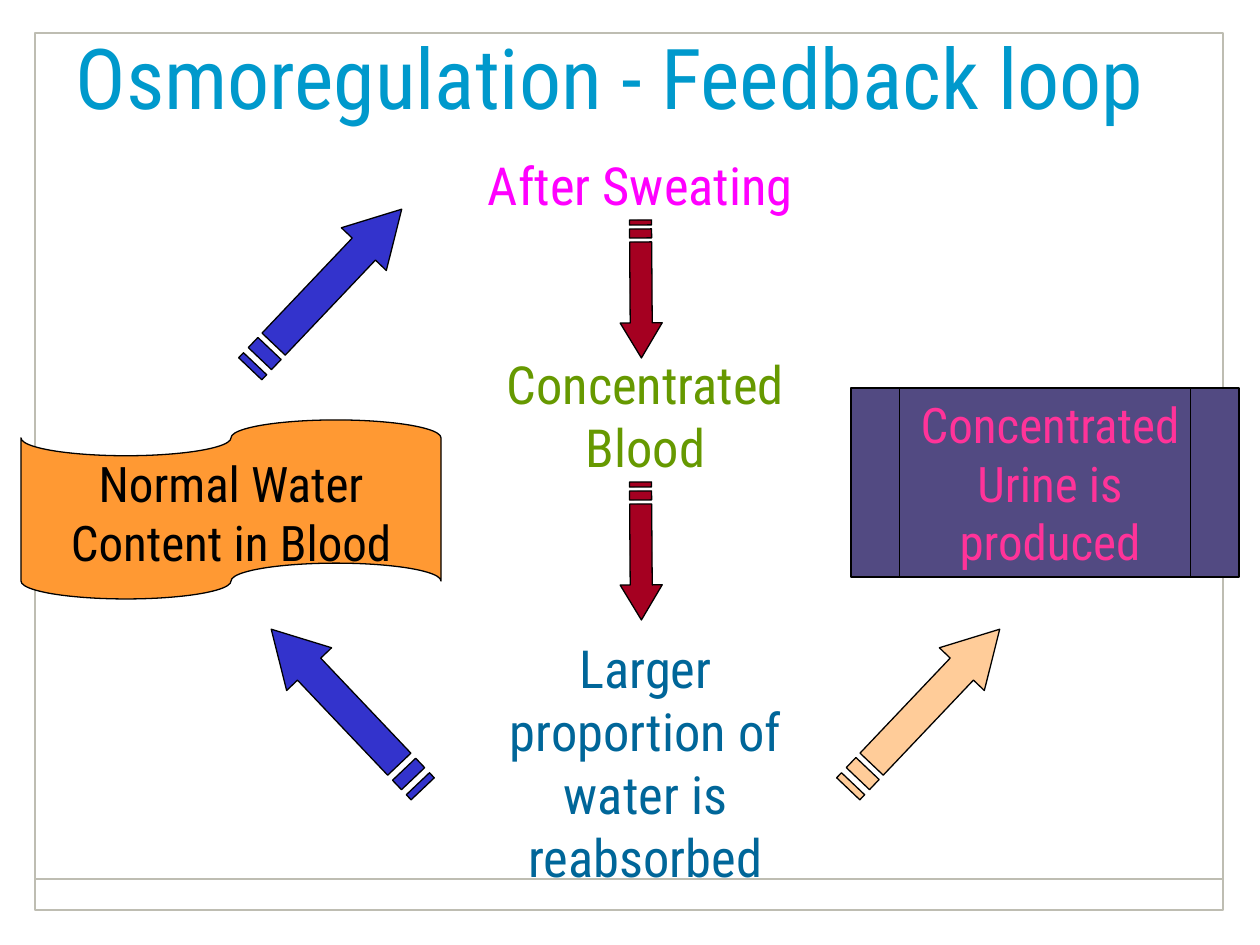
from dataclasses import dataclass

from lxml import etree
from pptx import Presentation
from pptx import util as u
from pptx.dml.color import RGBColor
from pptx.enum import shapes, text
from pptx.oxml.ns import qn

PX = 914400 / 126


@dataclass(frozen=True)
class Theme:
    font: str = "Roboto Condensed"
    head: int = 48
    body: int = 30
    small: int = 28
    title: str = "0099CC"
    frame: str = "BEBDB2"
    ink: str = "000000"
    sweat: str = "FF00FF"
    blood: str = "669900"
    water: str = "006699"
    urine: str = "FF3399"
    tape: str = "FF9933"
    panel: str = "524A82"
    blue: str = "3333CC"
    red: str = "A50021"
    peach: str = "FFCC99"
    shade: str = "8090A0"


T = Theme()


def px(*vals):
    return [round(v * PX) for v in vals]


def rgb(code):
    return RGBColor.from_string(code)


def paint(shape, fill=None, line=T.ink, width=0.75):
    shape.shadow.inherit = False
    if fill:
        shape.fill.solid()
        shape.fill.fore_color.rgb = rgb(fill)
    else:
        shape.fill.background()
    shape.line.color.rgb = rgb(line)
    shape.line.width = u.Pt(width)


def shade(run):
    """Give the letters a soft shadow to the lower right."""
    props = run.font._element if hasattr(run.font, "_element") else run._r.get_or_add_rPr()
    effects = etree.Element(qn("a:effectLst"))
    drop = etree.SubElement(effects, qn("a:outerShdw"), blurRad="38100",
                            dist="38100", dir="2700000", algn="tl")
    tint = etree.SubElement(drop, qn("a:srgbClr"), val=T.shade)
    etree.SubElement(tint, qn("a:alpha"), val="60000")
    props.find(qn("a:solidFill")).addnext(effects)


def write(frame, words, size=T.body, color=T.ink, shadow=True,
          anchor=text.MSO_ANCHOR.TOP):
    frame.word_wrap = True
    frame.auto_size = text.MSO_AUTO_SIZE.NONE
    frame.vertical_anchor = anchor
    para = frame.paragraphs[0]
    para.alignment = text.PP_ALIGN.CENTER
    run = para.add_run()
    run.text = words
    run.font.name = T.font
    run.font.size = u.Pt(size)
    run.font.color.rgb = rgb(color)
    if shadow:
        shade(run)


def label(slide, box, words, **look):
    write(slide.shapes.add_textbox(*px(*box)).text_frame, words, **look)


def block(slide, kind, box, fill=None, **look):
    paint(slide.shapes.add_shape(kind, *px(*box)), fill, **look)


def arrow(slide, mid, size, turn, fill):
    """Draw a striped arrow on a grid of 32 by 4, turned about its middle."""
    wide, high = size
    left, top = mid[0] - wide / 2, mid[1] - high / 2

    def spot(col, row):
        return left + wide * col / 32, top + high * row / 4

    parts = [[(24, 0), (24, 1), (5, 1), (5, 3), (24, 3), (24, 4), (32, 2)]]
    parts += [[(a, 1), (b, 1), (b, 3), (a, 3)] for a, b in ((2, 4), (0, 1))]
    pen = slide.shapes.build_freeform(*spot(*parts[0][0]), scale=PX)
    for i, part in enumerate(parts):
        dots = [spot(*dot) for dot in part]
        if i:
            pen.move_to(*dots[0])
        pen.add_line_segments(dots[1:], close=True)
    shape = pen.convert_to_shape()
    shape.rotation = turn
    paint(shape, fill)


def border(slide):
    block(slide, shapes.MSO_SHAPE.RECTANGLE, (35, 33, 1188, 877),
          line=T.frame, width=1)
    rule = slide.shapes.add_connector(shapes.MSO_CONNECTOR.STRAIGHT,
                                      *px(35, 879, 1223, 879))
    rule.line.color.rgb = rgb(T.frame)
    rule.line.width = u.Pt(1)
    etree.SubElement(rule._element.spPr, qn("a:effectLst"))


def heading(slide, box, words):
    title = slide.shapes.title
    title.left, title.top, title.width, title.height = px(*box)
    write(title.text_frame, words, size=T.head, color=T.title, shadow=False,
          anchor=text.MSO_ANCHOR.MIDDLE)


def main():
    deck = Presentation()
    deck.slide_width, deck.slide_height = px(1260, 945)
    slide = deck.slides.add_slide(deck.slide_layouts[5])
    border(slide)
    heading(slide, (0, 0, 1220, 152), "Osmoregulation - Feedback loop")

    block(slide, shapes.MSO_SHAPE.FLOWCHART_PUNCHED_TAPE,
          (21, 420, 420, 179), T.tape)
    label(slide, (21, 447, 420, 130), "Normal Water Content in Blood",
          size=T.small)
    block(slide, shapes.MSO_SHAPE.FLOWCHART_PREDEFINED_PROCESS,
          (851, 388, 388, 189), T.panel)
    label(slide, (882, 388, 336, 189), "Concentrated Urine is produced",
          size=T.small, color=T.urine)

    label(slide, (441, 147, 399, 76), "After Sweating", color=T.sweat)
    label(slide, (472, 346, 347, 139), "Concentrated Blood", color=T.blood)
    label(slide, (472, 630, 347, 265),
          "Larger proportion of water is reabsorbed", color=T.water)

    long, short = (220, 63), (137, 43)
    for mid, size, turn, fill in (
            ((326, 289), long, 313.5, T.blue),
            ((347, 709), long, 226.5, T.blue),
            ((924, 709), long, 313.5, T.peach),
            ((641, 551), short, 89.6, T.red),
            ((641, 289), short, 89.6, T.red)):
        arrow(slide, mid, size, turn, fill)
    deck.save("out.pptx")


if __name__ == "__main__":
    main()
